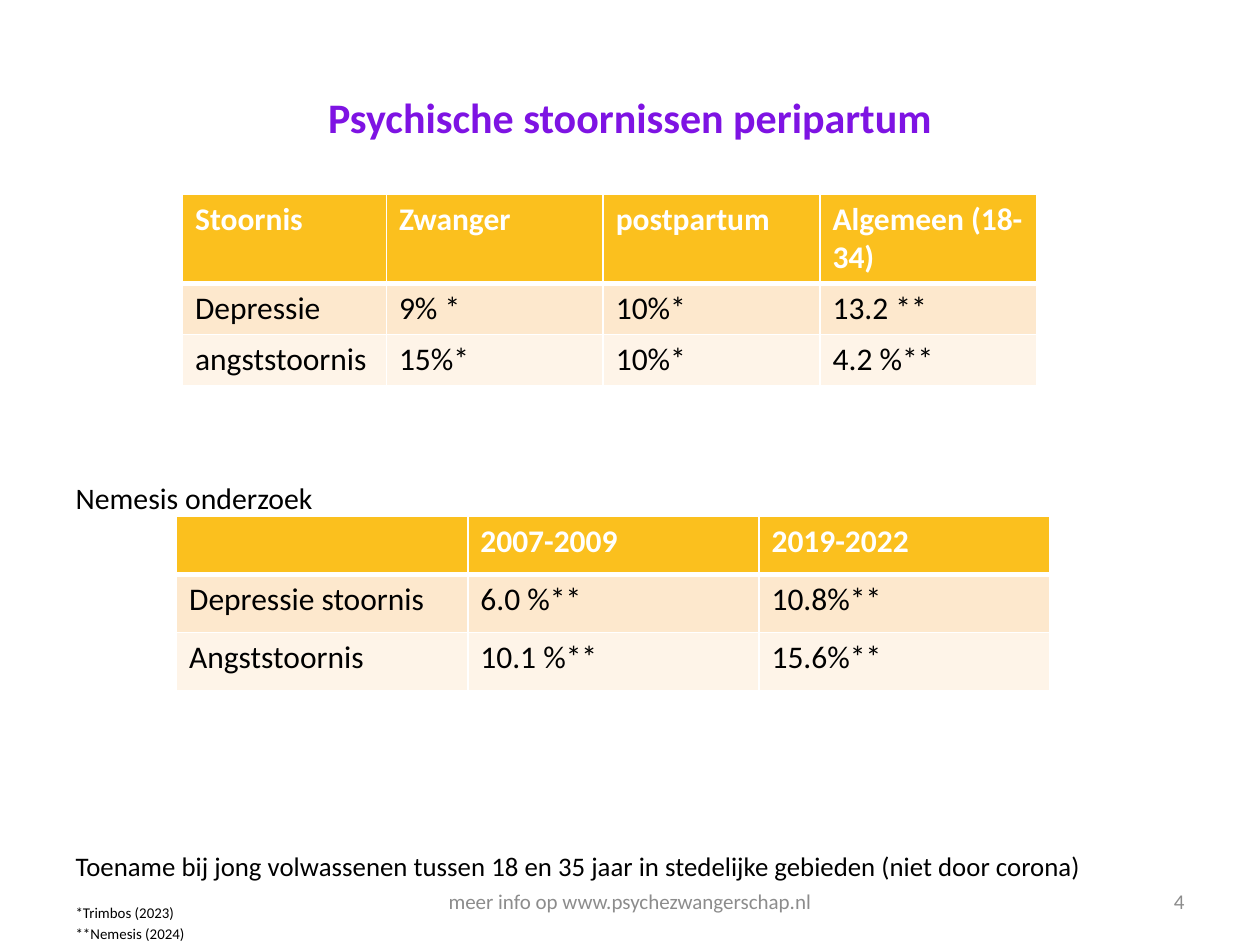
import pptx
import pptx.util
import pptx.dml.color
import pptx.enum.text
import pptx.oxml
import pptx.oxml.ns
from pptx.util import Cm, Pt

COLORS = {
    "title": "7E13E3",
    "text": "000000",
    "footer": "8C8C8C",
    "header": "FBC01E",
    "odd_row": "FDE8CD",
    "even_row": "FEF4E8",
    "white": "FFFFFF",
}
ALIGN = pptx.enum.text.PP_ALIGN
ANCHOR = pptx.enum.text.MSO_ANCHOR


class PeripartumSlide:
    font_name = "Calibri"

    def __init__(self, deck):
        self.slide = deck.slides.add_slide(deck.slide_layouts[1])

    def color(self, name):
        return pptx.dml.color.RGBColor.from_string(COLORS[name])

    def style(self, paragraph, size, color, bold=False, align=ALIGN.LEFT):
        paragraph.alignment = align
        for run in paragraph.runs:
            run.font.name = self.font_name
            run.font.size = Pt(size)
            run.font.bold = bold
            run.font.color.rgb = self.color(color)

    def place(self, shape, left, top, width, height, anchor):
        shape.left, shape.top = Cm(left), Cm(top)
        shape.width, shape.height = Cm(width), Cm(height)
        frame = shape.text_frame
        frame.word_wrap = True
        frame.auto_size = pptx.enum.text.MSO_AUTO_SIZE.NONE
        frame.vertical_anchor = anchor
        return frame

    def title(self, text, *box):
        heading = self.place(self.slide.shapes.title, *box, ANCHOR.MIDDLE)
        heading.text = text
        self.style(heading.paragraphs[0], 24, "title", True, ALIGN.CENTER)

    def body(self, remarks, top_inset, *box):
        body = self.place(self.slide.placeholders[1], *box, ANCHOR.TOP)
        body.margin_top = Cm(top_inset)
        body.text = "\n".join(text for text, _, _ in remarks)
        for paragraph, (_, size, gap) in zip(body.paragraphs, remarks):
            properties = paragraph._p.get_or_add_pPr()
            properties.set("marL", "0")
            properties.set("indent", "0")
            pptx.oxml.ns.qn("a:buNone")
            properties.append(pptx.oxml.parse_xml(
                f'<a:buNone {pptx.oxml.ns.nsdecls("a")}/>'))
            paragraph.space_before = Pt(gap)
            self.style(paragraph, size, "text")

    def footer(self, text, align, *box):
        footer = self.place(self.slide.shapes.add_textbox(0, 0, 0, 0), *box, ANCHOR.MIDDLE)
        footer.text = text
        self.style(footer.paragraphs[0], 12, "footer", align=align)

    def borders(self, cell, top, bottom):
        properties = cell._tc.get_or_add_tcPr()
        for side, width in (("L", 1), ("R", 1), ("T", top), ("B", bottom)):
            properties.append(pptx.oxml.parse_xml(
                f'<a:ln{side} {pptx.oxml.ns.nsdecls("a")} w="{Pt(width)}"><a:solidFill>'
                f'<a:srgbClr val="{COLORS["white"]}"/></a:solidFill></a:ln{side}>'))

    def table(self, rows, left, top, widths, heights):
        table = self.slide.shapes.add_table(
            len(rows), len(widths), Cm(left), Cm(top),
            Cm(sum(widths)), Cm(sum(heights))).table
        for column, width in zip(table.columns, widths):
            column.width = Cm(width)
        fills = ("header", "odd_row", "even_row")
        for index, (row, height) in enumerate(zip(rows, heights)):
            table.rows[index].height = Cm(height)
            is_header = index == 0
            for cell, text in zip(table.rows[index].cells, row):
                self.borders(cell, 3 if index == 1 else 1, 3 if is_header else 1)
                cell.fill.solid()
                cell.fill.fore_color.rgb = self.color(fills[index])
                cell.text_frame.text = text
                self.style(cell.text_frame.paragraphs[0], 18,
                           "white" if is_header else "text", is_header)


def main():
    deck = pptx.Presentation()
    deck.slide_width, deck.slide_height = Cm(25.4), Cm(19.05)
    page = PeripartumSlide(deck)
    page.title("Psychische stoornissen peripartum", 1.27, 0.76, 22.86, 3.18)
    page.body([
        ("Nemesis onderzoek", 17, 0),
        ("Toename bij jong volwassenen tussen 18 en 35 jaar in stedelijke gebieden "
         "(niet door corona)", 15.3, 190.6),
        ("*Trimbos (2023)", 8.5, 12.6),
        ("**Nemesis (2024)", 8.5, 1.9),
    ], 5.74, 1.27, 3.94, 22.86, 13.08)
    page.footer("meer info op www.psychezwangerschap.nl", ALIGN.CENTER, 8.68, 17.65, 8.04, 1.02)
    page.footer("4", ALIGN.RIGHT, 18.2, 17.65, 5.93, 1.02)
    page.table([
        ("", "2007-2009", "2019-2022"),
        ("Depressie stoornis", "6.0 %**", "10.8%**"),
        ("Angststoornis", "10.1 %**", "15.6%**"),
    ], 3.56, 10.41, [5.87] * 3, [1.17] * 3)
    page.table([
        ("Stoornis", "Zwanger", "postpartum", "Algemeen (18-34)"),
        ("Depressie", "9% *", "10%*", "13.2 **"),
        ("angststoornis", "15%*", "10%*", "4.2 %**"),
    ], 3.68, 3.91, [4.11] + [4.37] * 3, [1.78, 1.02, 1.02])
    deck.save("out.pptx")


if __name__ == "__main__":
    main()
